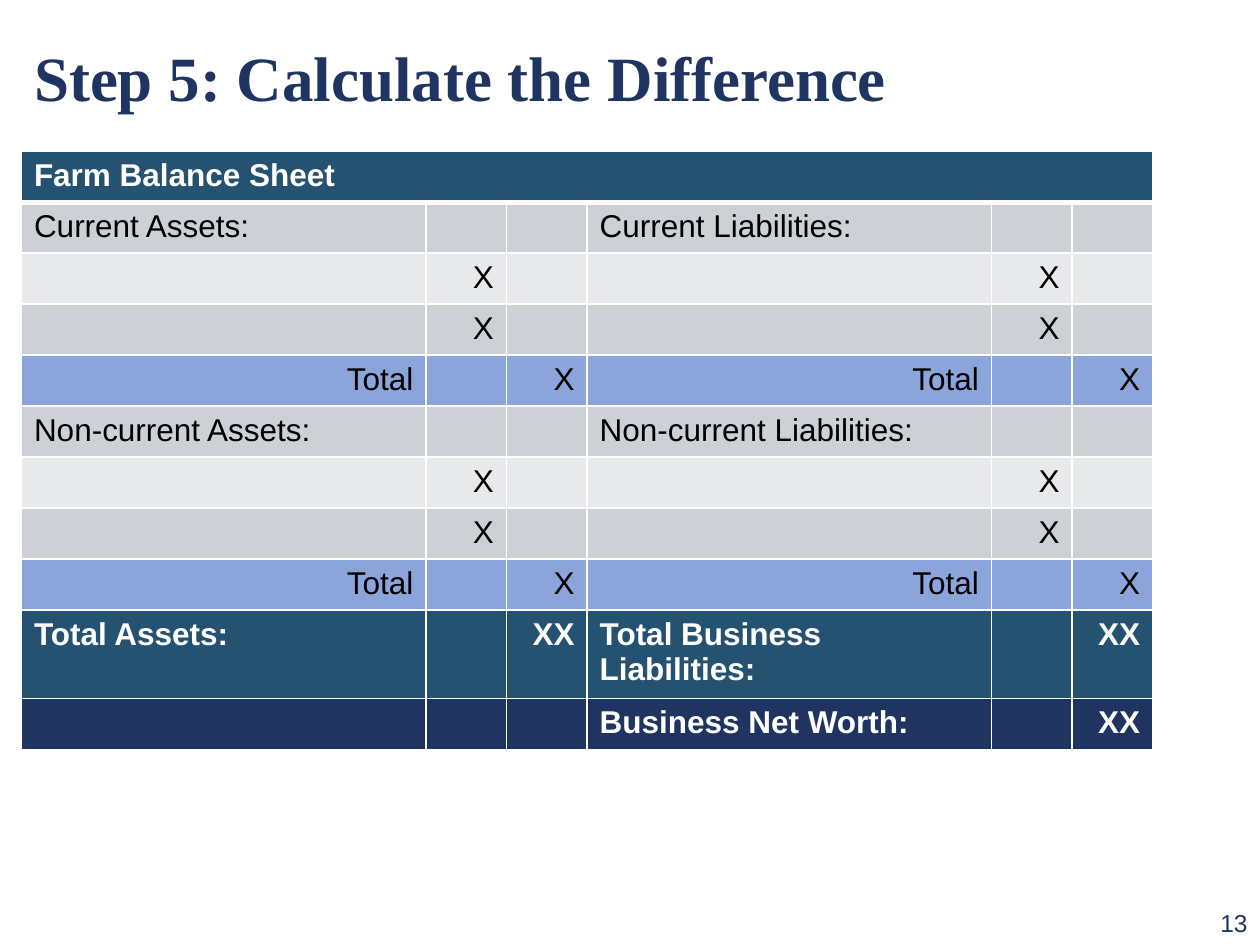
from lxml.etree import SubElement
from pptx import Presentation
from pptx.dml.color import RGBColor
from pptx.enum.text import MSO_ANCHOR as ANCHOR, PP_ALIGN as ALIGN
from pptx.oxml.ns import qn
from pptx.util import Inches, Pt

NAVY, TEAL, BLUE = "1F3461", "265272", "8BA4DA"
GREY, PALE, WHITE, BLACK = "CDD1D5", "E8E9EB", "FFFFFF", "000000"


def colour(value):
    return RGBColor.from_string(value)


def write(frame, text, size=18, font="Arial", ink=BLACK, bold=False, align=ALIGN.LEFT):
    paragraph = frame.paragraphs[0]
    paragraph.alignment = align
    run = paragraph.add_run()
    run.text = text
    run.font.size = Pt(size)
    run.font.name = font
    run.font.bold = bold
    run.font.color.rgb = colour(ink)


deck = Presentation()
deck.slide_width, deck.slide_height = Inches(10), Inches(7.5)
slide = deck.slides.add_slide(deck.slide_layouts[5])

heading = slide.shapes.title
heading.left, heading.top = Inches(0.17), Inches(0.17)
heading.width, heading.height = Inches(8.75), Inches(0.87)
heading.text_frame.vertical_anchor = ANCHOR.MIDDLE
write(heading.text_frame, "Step 5: Calculate the Difference",
      size=36, font="Times New Roman", ink=NAVY, bold=True)

page = slide.shapes.add_textbox(Inches(9.42), Inches(7.16), Inches(0.58), Inches(0.34))
page.text_frame.word_wrap = True
write(page.text_frame, "13", size=14, ink=NAVY, align=ALIGN.RIGHT)

entry = ["", "X", ""] * 2
total = ["Total", "", "X"] * 2
balance = [
    (TEAL, ["Farm Balance Sheet"] + [""] * 5),
    (GREY, ["Current Assets:", "", "", "Current Liabilities:", "", ""]),
    (PALE, entry),
    (GREY, entry),
    (BLUE, total),
    (GREY, ["Non-current Assets:", "", "", "Non-current Liabilities:", "", ""]),
    (PALE, entry),
    (GREY, entry),
    (BLUE, total),
    (TEAL, ["Total Assets:", "", "XX", "Total Business Liabilities:", "", "XX"]),
    (NAVY, ["", "", "", "Business Net Worth:", "", "XX"]),
]
widths = [3.21, 0.64, 0.64] * 2
row_height = 0.405

sheet = slide.shapes.add_table(
    len(balance), len(widths), Inches(0.17), Inches(1.2),
    Inches(sum(widths)), Inches(row_height * len(balance))).table
for column, width in zip(sheet.columns, widths):
    column.width = Inches(width)

for r, (fill, texts) in enumerate(balance):
    sheet.rows[r].height = Inches(row_height)
    strong = fill in (TEAL, NAVY)
    for c, text in enumerate(texts):
        cell = sheet.cell(r, c)
        cell.margin_left = cell.margin_right = Inches(0.1)
        borders = cell._tc.get_or_add_tcPr()
        for side in ("lnL", "lnR", "lnT", "lnB"):
            thick = (r, side) in ((0, "lnB"), (1, "lnT"))
            line = SubElement(borders, qn(f"a:{side}"), w=str(Pt(3 if thick else 1)))
            paint = SubElement(line, qn("a:solidFill"))
            SubElement(paint, qn("a:srgbClr"), val=WHITE)
        cell.fill.solid()
        cell.fill.fore_color.rgb = colour(fill)
        if text:
            label = c % 3 == 0 and text != "Total"
            write(cell.text_frame, text, ink=WHITE if strong else BLACK,
                  bold=strong, align=ALIGN.LEFT if label else ALIGN.RIGHT)
sheet.cell(0, 0).merge(sheet.cell(0, len(widths) - 1))

heading.text_frame.paragraphs[0].alignment = ALIGN.LEFT
deck.save("out.pptx")
